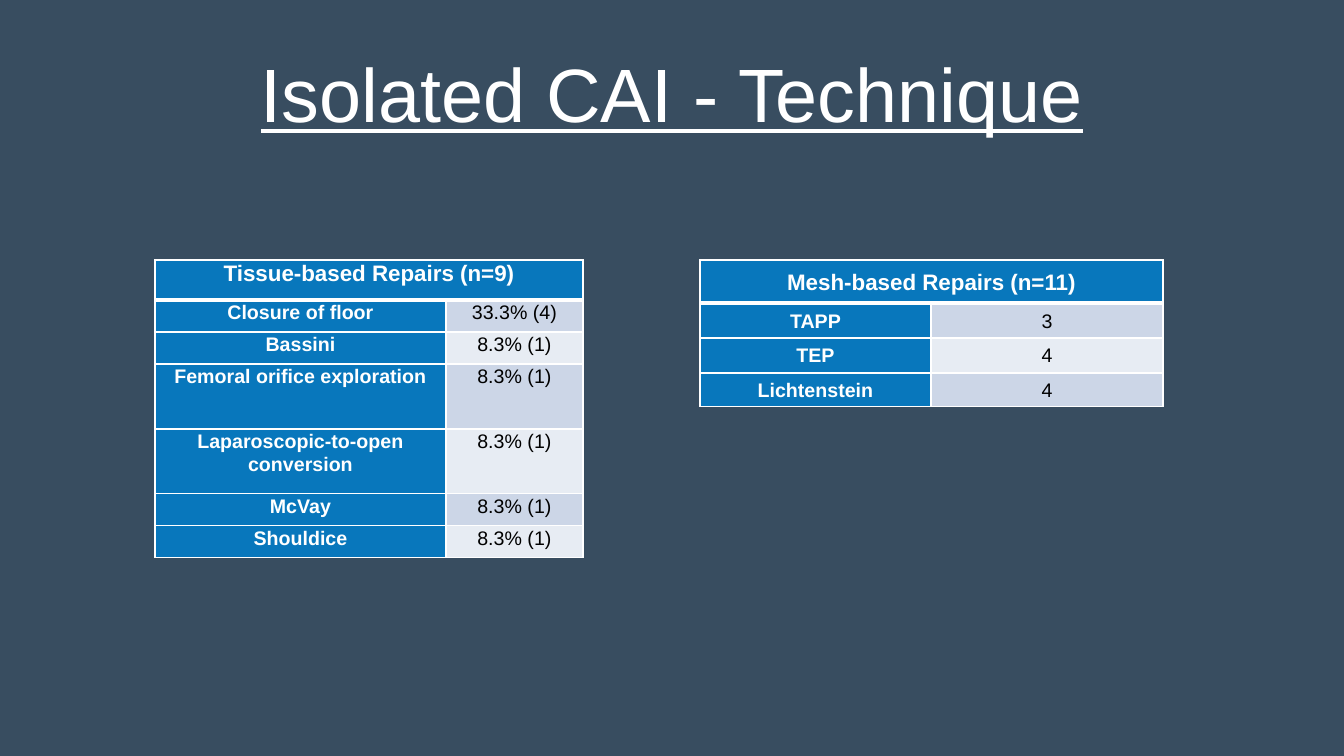
from dataclasses import dataclass

from lxml import etree
from pptx import Presentation
from pptx.dml.color import RGBColor
from pptx.enum.text import MSO_ANCHOR, PP_ALIGN
from pptx.oxml.ns import qn
from pptx.slide import Slide
from pptx.table import _Cell
from pptx.util import Emu, Pt

CENTER = PP_ALIGN.CENTER
TOP = MSO_ANCHOR.TOP
MIDDLE = MSO_ANCHOR.MIDDLE

SLIDE_WIDTH = 1344
SLIDE_HEIGHT = 756
EMU_PER_PX = 12192000 / SLIDE_WIDTH
FONT = "Arial"
CELL_MARGIN = 7
THIN = 1
THICK = 3

COLORS = {
    "background": "384D60",
    "white": "FFFFFF",
    "black": "000000",
    "label": "0877BC",
    "odd": "CCD6E7",
    "even": "E7ECF3",
}


@dataclass
class RepairTable:
    heading: str
    rows: list[tuple[str, str]]
    left: int
    top: int
    column_widths: list[int]
    row_heights: list[int]
    anchor: MSO_ANCHOR


REPAIR_TABLES = [
    RepairTable(
        "Tissue-based Repairs (n=9)",
        [
            ("Closure of floor", "33.3% (4)"),
            ("Bassini", "8.3% (1)"),
            ("Femoral orifice exploration", "8.3% (1)"),
            ("Laparoscopic-to-open conversion", "8.3% (1)"),
            ("McVay", "8.3% (1)"),
            ("Shouldice", "8.3% (1)"),
        ],
        155, 260, [291, 137], [40, 32, 32, 65, 65, 32, 32], TOP,
    ),
    RepairTable(
        "Mesh-based Repairs (n=11)",
        [("TAPP", "3"), ("TEP", "4"), ("Lichtenstein", "4")],
        700, 260, [231, 232], [43, 35, 35, 34], MIDDLE,
    ),
]


def px(length: int) -> Emu:
    return Emu(round(length * EMU_PER_PX))


def color(name: str) -> RGBColor:
    return RGBColor.from_string(COLORS[name])


def add_borders(cell: _Cell, top: int, bottom: int) -> None:
    properties = cell._tc.get_or_add_tcPr()
    widths = {"a:lnL": THIN, "a:lnR": THIN, "a:lnT": top, "a:lnB": bottom}
    for tag, width in widths.items():
        line = etree.SubElement(properties, qn(tag), w=str(Pt(width)))
        fill = etree.SubElement(line, qn("a:solidFill"))
        etree.SubElement(fill, qn("a:srgbClr"), val=COLORS["white"])


def style_cell(cell: _Cell, text: str, size: int, fill: str, is_label: bool,
               anchor: MSO_ANCHOR) -> None:
    cell.fill.solid()
    cell.fill.fore_color.rgb = color(fill)
    cell.margin_left = cell.margin_right = px(CELL_MARGIN)
    cell.margin_top = cell.margin_bottom = 0
    cell.vertical_anchor = anchor
    cell.text = text
    paragraph = cell.text_frame.paragraphs[0]
    paragraph.alignment = CENTER
    paragraph.line_spacing = 1.07
    paragraph.font.name = FONT
    paragraph.font.size = Pt(size)
    paragraph.font.bold = is_label
    paragraph.font.color.rgb = color("white" if is_label else "black")


def add_title(slide: Slide, text: str) -> None:
    title = slide.shapes.add_textbox(0, px(25), px(SLIDE_WIDTH), px(146))
    frame = title.text_frame
    frame.word_wrap = True
    frame.vertical_anchor = MIDDLE
    frame.text = text
    paragraph = frame.paragraphs[0]
    paragraph.alignment = CENTER
    paragraph.line_spacing = 0.9
    paragraph.font.name = FONT
    paragraph.font.size = Pt(54)
    paragraph.font.underline = True
    paragraph.font.color.rgb = color("white")


def add_repair_table(slide: Slide, repairs: RepairTable) -> None:
    table = slide.shapes.add_table(
        len(repairs.row_heights), len(repairs.column_widths),
        px(repairs.left), px(repairs.top),
        px(sum(repairs.column_widths)), px(sum(repairs.row_heights)),
    ).table
    for column, width in zip(table.columns, repairs.column_widths):
        column.width = px(width)
    for row, height in zip(table.rows, repairs.row_heights):
        row.height = px(height)

    for row_index, row in enumerate(table.rows):
        for cell in row.cells:
            add_borders(cell, THICK if row_index == 1 else THIN,
                        THICK if row_index == 0 else THIN)

    heading = table.cell(0, 0)
    heading.merge(table.cell(0, 1))
    style_cell(heading, repairs.heading, 16, "label", True, repairs.anchor)
    for row_index, (technique, value) in enumerate(repairs.rows, start=1):
        band = "odd" if row_index % 2 else "even"
        style_cell(table.cell(row_index, 0), technique, 14, "label", True, repairs.anchor)
        style_cell(table.cell(row_index, 1), value, 14, band, False, repairs.anchor)


def main() -> None:
    presentation = Presentation()
    presentation.slide_width = px(SLIDE_WIDTH)
    presentation.slide_height = px(SLIDE_HEIGHT)
    slide = presentation.slides.add_slide(presentation.slide_layouts[6])
    slide.background.fill.solid()
    slide.background.fill.fore_color.rgb = color("background")
    add_title(slide, "Isolated CAI - Technique")
    for repairs in REPAIR_TABLES:
        add_repair_table(slide, repairs)
    presentation.save("out.pptx")


if __name__ == "__main__":
    main()
